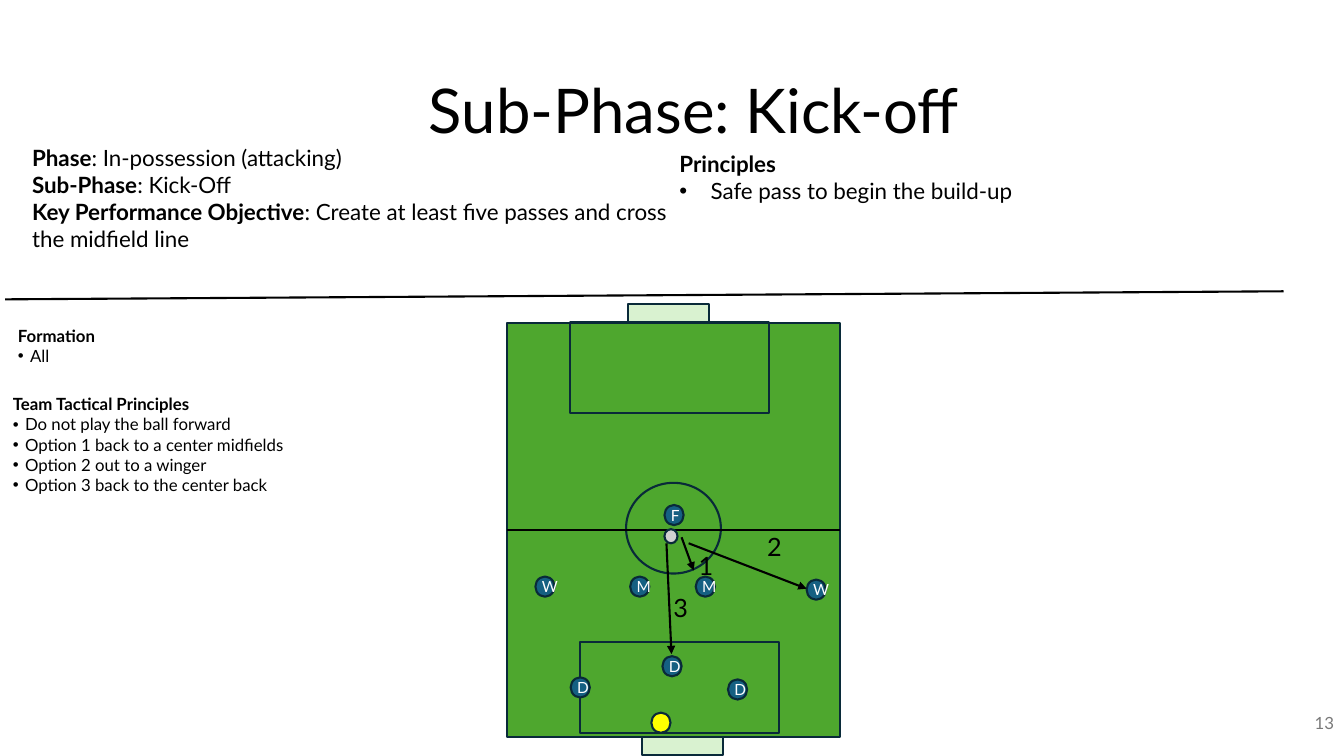
from dataclasses import dataclass

from lxml import etree
from pptx import Presentation
from pptx import util as u
from pptx.dml.color import RGBColor
from pptx.enum import shapes, text
from pptx.oxml import ns

CELL = u.Inches(0.1)
COLUMNS, ROWS = 133.3, 75
FONT = "Lato"
BLACK, WHITE, GRAY = "000000", "FFFFFF", "797979"
OUTLINE, GRASS, GOAL = "092A39", "4EA72E", "D9F2D0"
TEAM, KEEPER, BALL = "156082", "FFFF00", "D1D1D1"
RECTANGLE, OVAL = shapes.MSO_SHAPE.RECTANGLE, shapes.MSO_SHAPE.OVAL
LEFT, CENTER, RIGHT = text.PP_ALIGN.LEFT, text.PP_ALIGN.CENTER, text.PP_ALIGN.RIGHT
TOP, MIDDLE = text.MSO_ANCHOR.TOP, text.MSO_ANCHOR.MIDDLE


@dataclass(frozen=True)
class Area:
    column: float
    row: float
    columns: float
    rows: float


@dataclass(frozen=True)
class Mark:
    area: Area
    fill: str = ""
    kind: int = RECTANGLE
    label: str = ""


@dataclass(frozen=True)
class Line:
    bold: str = ""
    plain: str = ""
    bullet: float = 0


@dataclass(frozen=True)
class Block:
    area: Area
    lines: tuple[Line, ...]
    size: float
    align: int = LEFT
    anchor: int = TOP
    color: str = BLACK
    wrap: bool = True
    spacing: float = 1.0


@dataclass(frozen=True)
class Stroke:
    start: tuple[float, float]
    end: tuple[float, float]
    arrow: bool = False


def grid(cells: float) -> int:
    return round(cells * CELL)


def place(area: Area) -> tuple[int, int, int, int]:
    return grid(area.column), grid(area.row), grid(area.columns), grid(area.rows)


def rgb(color: str) -> RGBColor:
    return RGBColor.from_string(color)


def style_font(font, size: float, color: str, bold: bool = False) -> None:
    font.name, font.size, font.bold = FONT, u.Pt(size), bold
    font.color.rgb = rgb(color)


def draw_mark(page, mark: Mark):
    shape = page.shapes.add_shape(mark.kind, *place(mark.area))
    shape.shadow.inherit = False
    if mark.fill:
        shape.fill.solid()
        shape.fill.fore_color.rgb = rgb(mark.fill)
    else:
        shape.fill.background()
    shape.line.color.rgb = rgb(OUTLINE)
    shape.line.width = u.Pt(1.5)
    if mark.label:
        frame = shape.text_frame
        frame.text = mark.label
        frame.vertical_anchor = MIDDLE
        para = frame.paragraphs[0]
        para.alignment = CENTER
        style_font(para.runs[0].font, 11, WHITE)
    return shape


def add_bullet(para, indent: float) -> None:
    properties = para._p.get_or_add_pPr()
    properties.set("marL", str(grid(indent)))
    properties.set("indent", str(-grid(indent)))
    etree.SubElement(properties, ns.qn("a:buFont")).set("typeface", "Arial")
    etree.SubElement(properties, ns.qn("a:buChar")).set("char", "•")


def draw_block(page, block: Block) -> None:
    box = page.shapes.add_textbox(*place(block.area))
    frame = box.text_frame
    frame.word_wrap = block.wrap
    frame.vertical_anchor = block.anchor
    for index, line in enumerate(block.lines):
        para = frame.add_paragraph() if index else frame.paragraphs[0]
        if line.bullet:
            add_bullet(para, line.bullet)
        para.alignment = block.align
        para.line_spacing = block.spacing
        for words, bold in ((line.bold, True), (line.plain, False)):
            if words:
                span = para.add_run()
                span.text = words
                style_font(span.font, block.size, block.color, bold)


def draw_stroke(page, stroke: Stroke):
    ends = [grid(value) for value in (*stroke.start, *stroke.end)]
    connector = page.shapes.add_connector(shapes.MSO_CONNECTOR.STRAIGHT, *ends)
    connector.line.color.rgb = rgb(BLACK)
    connector.line.width = u.Pt(1.5)
    if stroke.arrow:
        tail = etree.SubElement(connector.line._get_or_add_ln(), ns.qn("a:tailEnd"))
        tail.set("type", "triangle")
    etree.SubElement(connector._element.spPr, ns.qn("a:effectLst"))
    return connector


PITCH = Mark(Area(50.3, 32, 33, 41.1), GRASS)
PITCH_PARTS = (
    Mark(Area(62.3, 30.2, 8, 1.8), GOAL),
    Mark(Area(63.7, 73.1, 8, 1.8), GOAL),
    Mark(Area(56.5, 32, 19.8, 9)),
    Mark(Area(57.5, 63.7, 19.8, 9)),
    Mark(Area(62.1, 47.9, 9.4, 9), kind=OVAL),
)
PLAYERS = (
    ("D", 56.6, 67.2, TEAM),
    ("", 64.6, 70.7, KEEPER),
    ("D", 72.2, 67.4, TEAM),
    ("D", 65.7, 65.1, TEAM),
    ("M", 69, 57.2, TEAM),
    ("W", 80, 57.5, TEAM),
    ("F", 65.9, 50.1, TEAM),
    ("W", 53.1, 57.2, TEAM),
    ("M", 62.5, 57.2, TEAM),
)
PASSES = (
    Stroke((67.6, 53.3), (68.8, 56.6), True),
    Stroke((68.3, 53.9), (80, 58.4), True),
    Stroke((66.1, 53.9), (66.6, 64.9), True),
)
PASS_LABELS = (("1", 68.3, 54.1), ("2", 75.1, 52.2), ("3", 65.8, 58.3))
DIVIDER = Stroke((0.5, 29.7), (127.3, 28.9))
BLOCKS = (
    Block(Area(13.5, 4, 110.7, 14.5), (Line(plain="Sub-Phase: Kick-off"),),
          44, CENTER, MIDDLE, spacing=0.9),
    Block(Area(103.3, 69.7, 30, 4), (Line(plain="13"),), 12, RIGHT, MIDDLE, GRAY),
    Block(Area(2.2, 13.8, 66.7, 14.5), (
        Line("Phase", ": In-possession (attacking)"),
        Line("Sub-Phase", ": Kick-Off"),
        Line("Key Performance Objective",
             ": Create at least five passes and cross the midfield line"),
    ), 16),
    Block(Area(66.4, 14.4, 66.7, 6.4), (
        Line("Principles"),
        Line(plain="Safe pass to begin the build-up", bullet=3.1),
    ), 16),
    Block(Area(0.8, 31.8, 40.9, 5), (
        Line("Formation"),
        Line(plain="All", bullet=1.2),
    ), 12),
    Block(Area(0.3, 38.6, 47.3, 13.1), (
        Line("Team Tactical Principles"),
        Line(plain="Do not play the ball forward", bullet=1.2),
        Line(plain="Option 1 back to a center midfields", bullet=1.2),
        Line(plain="Option 2 out to a winger", bullet=1.2),
        Line(plain="Option 3 back to the center back", bullet=1.2),
    ), 12),
)


def main() -> None:
    deck = Presentation()
    deck.slide_width, deck.slide_height = grid(COLUMNS), grid(ROWS)
    page = deck.slides.add_slide(deck.slide_layouts[6])
    pitch = draw_mark(page, PITCH)
    for part in PITCH_PARTS:
        draw_mark(page, part)
    halfway = draw_stroke(page, Stroke((50.3, 52.5), (83.3, 52.5)))
    halfway.begin_connect(pitch, 1)
    halfway.end_connect(pitch, 3)
    for block in BLOCKS:
        draw_block(page, block)
    draw_stroke(page, DIVIDER)
    for label, column, row, fill in PLAYERS:
        draw_mark(page, Mark(Area(column, row, 1.9, 2), fill, OVAL, label))
    draw_mark(page, Mark(Area(65.9, 52.5, 1.3, 1.4), BALL, OVAL))
    for stroke in PASSES:
        draw_stroke(page, stroke)
    for label, column, row in PASS_LABELS:
        draw_block(page, Block(Area(column, row, 3.4, 4), (Line(plain=label),), 18, wrap=False))
    deck.save("out.pptx")


if __name__ == "__main__":
    main()
